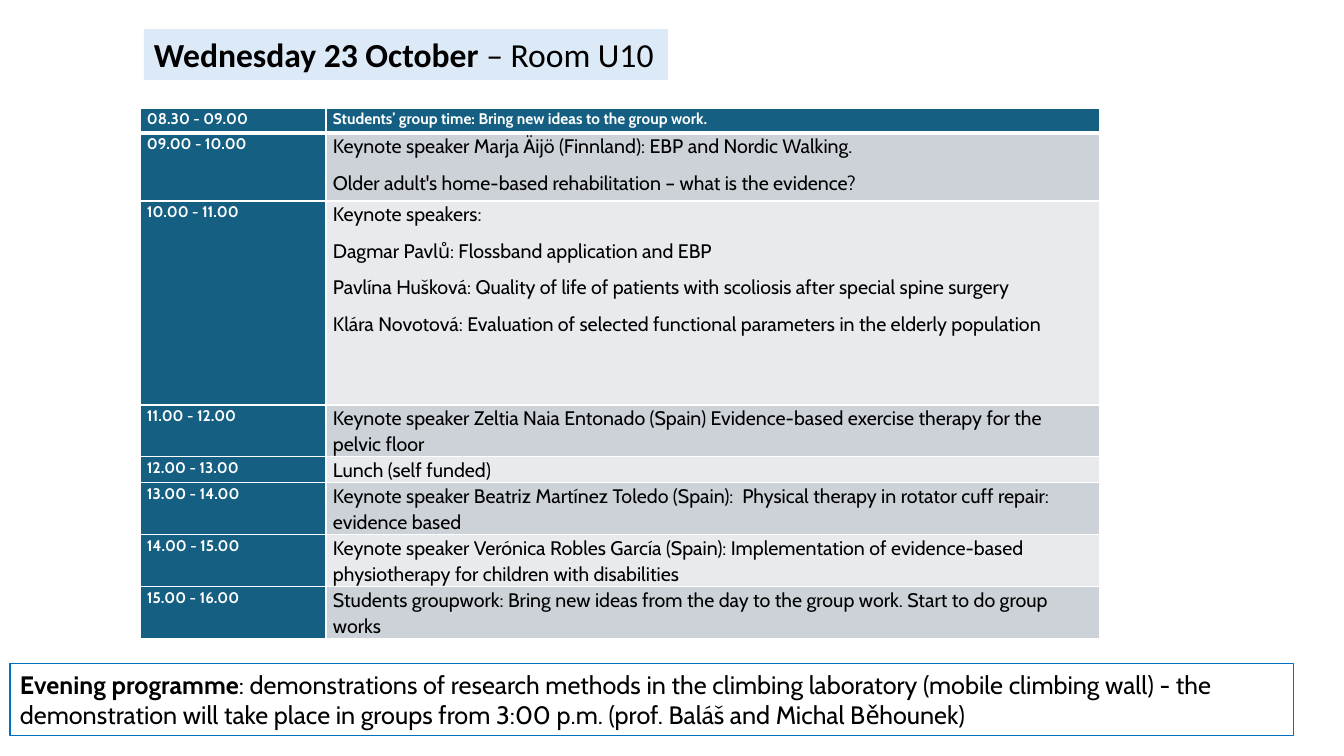
from lxml import etree
from pptx import Presentation
from pptx import util as u
from pptx.dml.color import RGBColor
from pptx.enum import shapes, text
from pptx.oxml.ns import qn

TITLE = [("Wednesday 23 October ", True), ("– Room U10", False)]
PROGRAMME = [
    ("08.30 - 09.00", ["Students’ group time: Bring new ideas to the group work."]),
    ("09.00 - 10.00", ["Keynote speaker Marja Äijö (Finnland): EBP and Nordic Walking.",
                       "Older adult's home-based rehabilitation – what is the evidence?"]),
    ("10.00 - 11.00", ["Keynote speakers:",
                       "Dagmar Pavlů: Flossband application and EBP",
                       "Pavlína Hušková: Quality of life of patients with scoliosis "
                       "after special spine surgery",
                       "Klára Novotová: Evaluation of selected functional parameters "
                       "in the elderly population"]),
    ("11.00 - 12.00", ["Keynote speaker Zeltia Naia Entonado (Spain) Evidence-based "
                       "exercise therapy for the pelvic floor"]),
    ("12.00 - 13.00", ["Lunch (self funded)"]),
    ("13.00 - 14.00", ["Keynote speaker Beatriz Martínez Toledo (Spain):  Physical therapy "
                       "in rotator cuff repair: evidence based"]),
    ("14.00 - 15.00", ["Keynote speaker Verónica Robles García (Spain): Implementation of "
                       "evidence-based physiotherapy for children with disabilities"]),
    ("15.00 - 16.00", ["Students groupwork: Bring new ideas from the day to the group work. "
                       "Start to do group works"]),
]
EVENING = [
    ("Evening programme", True),
    (": demonstrations of research methods in the climbing laboratory (mobile climbing wall) "
     "- the demonstration will take place in groups from 3:00 p.m. "
     "(prof. Baláš and Michal Běhounek)", False),
]

THEME = {
    "title_font": "Calibri", "body_font": "Cabin",
    "title_size": 24, "evening_size": 18, "session_size": 14, "label_size": 11,
    "ink": "000000", "white": "FFFFFF", "header": "156082",
    "bands": ("E8EAED", "CCD2D8"), "title_fill": "DCEAF7", "outline": "0070C0",
}

SLIDE = (1344, 756)
TITLE_AREA = (144, 29, 524, 51)
EVENING_AREA = (10, 664, 1284, 72)
TABLE_ORIGIN = (140, 108)
COLUMNS = (186, 774)
ROWS = (25, 68, 204, 52, 26, 52, 52, 52)
CELL_INSET = 7


def px(length):
    return u.Emu(round(length * 914400 / 100.8))


def colour(name):
    return RGBColor.from_string(THEME.get(name, name))


def add_span(para, words, font, size, ink, bold):
    span = para.add_run()
    span.text = words
    span.font.name = THEME[font]
    span.font.size = u.Pt(THEME[size])
    span.font.color.rgb = colour(ink)
    span.font.bold = bold


def add_box(page, area, spans, font, size, fill=None, outline=None):
    box = page.shapes.add_shape(shapes.MSO_SHAPE.RECTANGLE, *map(px, area))
    box.shadow.inherit = False
    if fill:
        box.fill.solid()
        box.fill.fore_color.rgb = colour(fill)
    else:
        box.fill.background()
    if outline:
        box.line.color.rgb = colour(outline)
        box.line.width = u.Pt(0.75)
    else:
        box.line.fill.background()
    para = box.text_frame.paragraphs[0]
    para.alignment = text.PP_ALIGN.LEFT
    for words, bold in spans:
        add_span(para, words, font, size, "ink", bold)
    return box.text_frame


def add_borders(cell, widths):
    """Draw white cell edges; widths maps L, R, T and B, in that order, to points."""
    properties = cell._tc.get_or_add_tcPr()
    for side, width in widths.items():
        edge = etree.SubElement(properties, qn(f"a:ln{side}"), w=str(u.Pt(width)))
        paint = etree.SubElement(edge, qn("a:solidFill"))
        etree.SubElement(paint, qn("a:srgbClr"), val=THEME["white"])


def fill_cell(cell, lines, row, column):
    is_label = row == 0 or column == 0
    add_borders(cell, {"L": 1, "R": 1, "T": 3 if row == 1 else 1, "B": 3 if row == 0 else 1})
    cell.fill.solid()
    cell.fill.fore_color.rgb = colour("header" if is_label else THEME["bands"][row % 2])
    cell.margin_left = cell.margin_right = px(CELL_INSET)
    cell.margin_top = cell.margin_bottom = 0
    frame = cell.text_frame
    for number, line in enumerate(lines):
        para = frame.add_paragraph() if number else frame.paragraphs[0]
        para.line_spacing = 1.07
        para.space_after = u.Pt(8)
        add_span(para, line, "body_font", "label_size" if is_label else "session_size",
                 "white" if is_label else "ink", is_label)


def add_programme(page):
    size = (sum(COLUMNS), sum(ROWS))
    table = page.shapes.add_table(len(ROWS), len(COLUMNS),
                                  *map(px, TABLE_ORIGIN + size)).table
    for column, width in zip(table.columns, COLUMNS):
        column.width = px(width)
    for row, (height, (time, sessions)) in enumerate(zip(ROWS, PROGRAMME)):
        table.rows[row].height = px(height)
        for column, lines in enumerate(([time], sessions)):
            fill_cell(table.cell(row, column), lines, row, column)


def main():
    deck = Presentation()
    deck.slide_width, deck.slide_height = map(px, SLIDE)
    page = deck.slides.add_slide(deck.slide_layouts[6])

    add_programme(page)
    title = add_box(page, TITLE_AREA, TITLE, "title_font", "title_size", fill="title_fill")
    title.word_wrap = False
    title.vertical_anchor = text.MSO_ANCHOR.MIDDLE
    evening = add_box(page, EVENING_AREA, EVENING, "body_font", "evening_size",
                      outline="outline")
    evening.word_wrap = True
    evening.vertical_anchor = text.MSO_ANCHOR.TOP

    deck.save("out.pptx")


if __name__ == "__main__":
    main()
